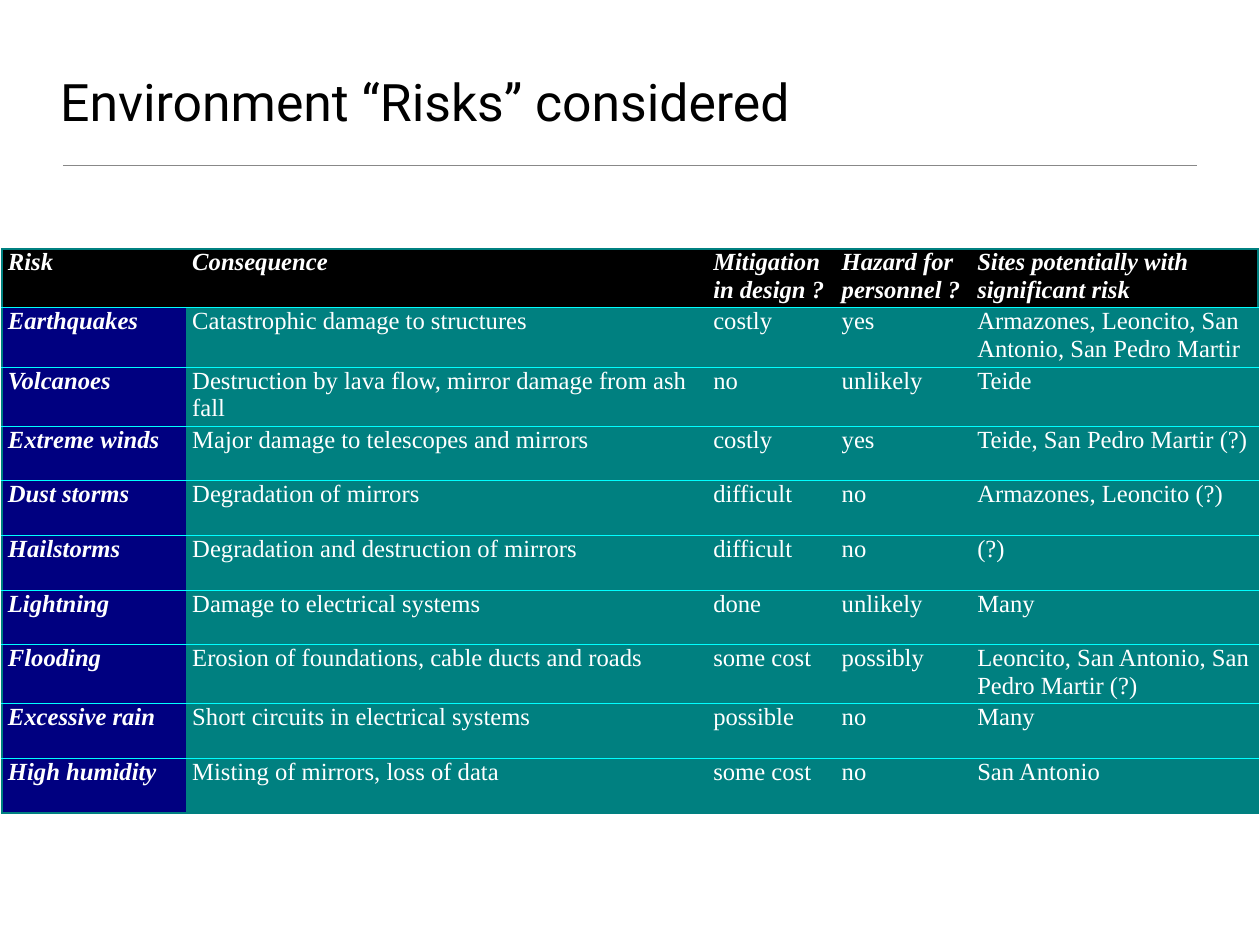
from dataclasses import dataclass

from lxml.etree import SubElement
from pptx import Presentation
from pptx.dml.color import RGBColor
from pptx.enum.shapes import MSO_CONNECTOR
from pptx.enum.text import MSO_ANCHOR
from pptx.oxml.ns import qn
from pptx.slide import Slide
from pptx.table import _Cell as Cell
from pptx.text.text import TextFrame
from pptx.util import Inches, Pt


@dataclass(frozen=True)
class Theme:
    """Colours, fonts and sizes of the slide."""
    title_font: str = "Roboto"
    table_font: str = "Times New Roman"
    title_size: float = 42
    table_size: float = 20
    title: str = "000000"
    rule: str = "888888"
    header: str = "000000"
    risk: str = "000080"
    body: str = "008080"
    text: str = "FFFFFF"
    row_line: str = "00FFFF"
    frame: str = "008080"
    thin: float = 1
    thick: float = 1.5


@dataclass(frozen=True)
class Risk:
    """One row of the risk table."""
    name: str
    consequence: str
    mitigation: str
    hazard: str
    sites: str

    def values(self) -> tuple[str, ...]:
        """Return the row's texts in column order."""
        return self.name, self.consequence, self.mitigation, self.hazard, self.sites


THEME = Theme()
COLUMN_WIDTHS = (2.08, 5.88, 1.45, 1.53, 3.24)
TABLE_HEIGHT = 6.17
ROWS = (
    Risk("Risk", "Consequence", "Mitigation in design ?", "Hazard for personnel ?",
         "Sites potentially with significant risk"),
    Risk("Earthquakes", "Catastrophic damage to structures", "costly", "yes",
         "Armazones, Leoncito, San Antonio, San Pedro Martir"),
    Risk("Volcanoes", "Destruction by lava flow, mirror damage from ash fall",
         "no", "unlikely", "Teide"),
    Risk("Extreme winds", "Major damage to telescopes and mirrors", "costly", "yes",
         "Teide, San Pedro Martir (?)"),
    Risk("Dust storms", "Degradation of mirrors", "difficult", "no",
         "Armazones, Leoncito (?)"),
    Risk("Hailstorms", "Degradation and destruction of mirrors", "difficult", "no", "(?)"),
    Risk("Lightning", "Damage to electrical systems", "done", "unlikely", "Many"),
    Risk("Flooding", "Erosion of foundations, cable ducts and roads", "some cost",
         "possibly", "Leoncito, San Antonio, San Pedro Martir (?)"),
    Risk("Excessive rain", "Short circuits in electrical systems", "possible", "no", "Many"),
    Risk("High humidity", "Misting of mirrors, loss of data", "some cost", "no",
         "San Antonio"),
)


def add_run(tf: TextFrame, text: str, font: str, size: float, color: str,
            strong: bool = False) -> None:
    """Add a run to the first paragraph, bold and italic if strong."""
    r = tf.paragraphs[0].add_run()
    r.text = text
    r.font.name = font
    r.font.size = Pt(size)
    r.font.color.rgb = RGBColor.from_string(color)
    r.font.bold = r.font.italic = strong


def add_border(cell: Cell, side: str, color: str | None, width: float) -> None:
    """Draw one cell border, or hide it when it has no colour."""
    ln = SubElement(cell._tc.get_or_add_tcPr(), qn(f"a:ln{side}"), w=str(Pt(width)))
    if color is None:
        SubElement(ln, qn("a:noFill"))
    else:
        fill = SubElement(ln, qn("a:solidFill"))
        SubElement(fill, qn("a:srgbClr"), val=color)


def add_title(s: Slide, text: str) -> None:
    """Add the title and the rule below it."""
    sp = s.shapes.add_textbox(Inches(0.62), Inches(0.36), Inches(12.97), Inches(1.19))
    tf = sp.text_frame
    tf.word_wrap = True
    tf.vertical_anchor = MSO_ANCHOR.BOTTOM
    tf.margin_left = tf.margin_right = tf.margin_top = tf.margin_bottom = Inches(0.06)
    add_run(tf, text, THEME.title_font, THEME.title_size, THEME.title)
    rule = s.shapes.add_connector(MSO_CONNECTOR.STRAIGHT, Inches(0.71), Inches(1.87),
                                  Inches(13.51), Inches(1.87))
    rule.line.color.rgb = RGBColor.from_string(THEME.rule)
    rule.line.width = Pt(THEME.thin)
    SubElement(rule._element.spPr, qn("a:effectLst"))


def style_cell(cell: Cell, row: int, col: int) -> None:
    """Set the margins, borders and fill that follow from a cell's place."""
    cell.margin_left = cell.margin_right = Inches(0.07)
    cell.margin_top = cell.margin_bottom = 0
    outer = (THEME.frame, THEME.thick)
    inner = (THEME.row_line, THEME.thin)
    hidden = (None, 0)
    add_border(cell, "L", *(outer if col == 0 else hidden))
    add_border(cell, "R", *(outer if col == len(COLUMN_WIDTHS) - 1 else hidden))
    add_border(cell, "T", *(outer if row == 0 else inner))
    add_border(cell, "B", *(outer if row == len(ROWS) - 1 else inner))
    color = THEME.header if row == 0 else THEME.risk if col == 0 else THEME.body
    cell.fill.solid()
    cell.fill.fore_color.rgb = RGBColor.from_string(color)


def add_risk_table(s: Slide) -> None:
    """Add the table of risks."""
    table = s.shapes.add_table(len(ROWS), len(COLUMN_WIDTHS), Inches(0.02), Inches(2.81),
                               Inches(sum(COLUMN_WIDTHS)), Inches(TABLE_HEIGHT)).table
    table.horz_banding = False
    for column, width in zip(table.columns, COLUMN_WIDTHS):
        column.width = Inches(width)
    for row, risk in enumerate(ROWS):
        for col, text in enumerate(risk.values()):
            cell = table.cell(row, col)
            style_cell(cell, row, col)
            add_run(cell.text_frame, text, THEME.table_font, THEME.table_size,
                    THEME.text, strong=row == 0 or col == 0)


def main() -> None:
    """Build and save the slide."""
    prs = Presentation()
    prs.slide_width, prs.slide_height = Inches(14.22), Inches(10.67)
    s = prs.slides.add_slide(prs.slide_layouts[6])
    add_title(s, "Environment “Risks” considered")
    add_risk_table(s)
    prs.save("out.pptx")


if __name__ == "__main__":
    main()
